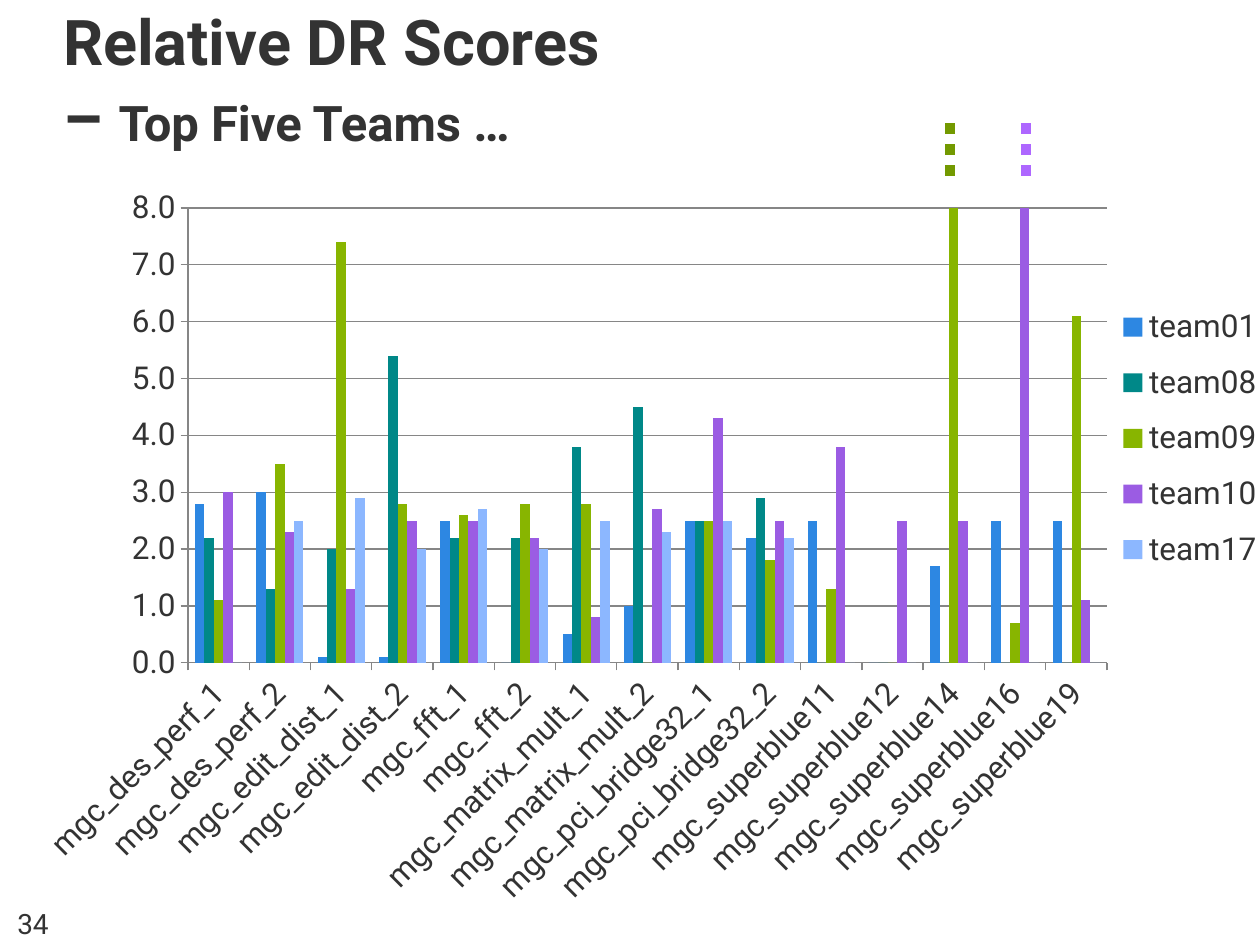
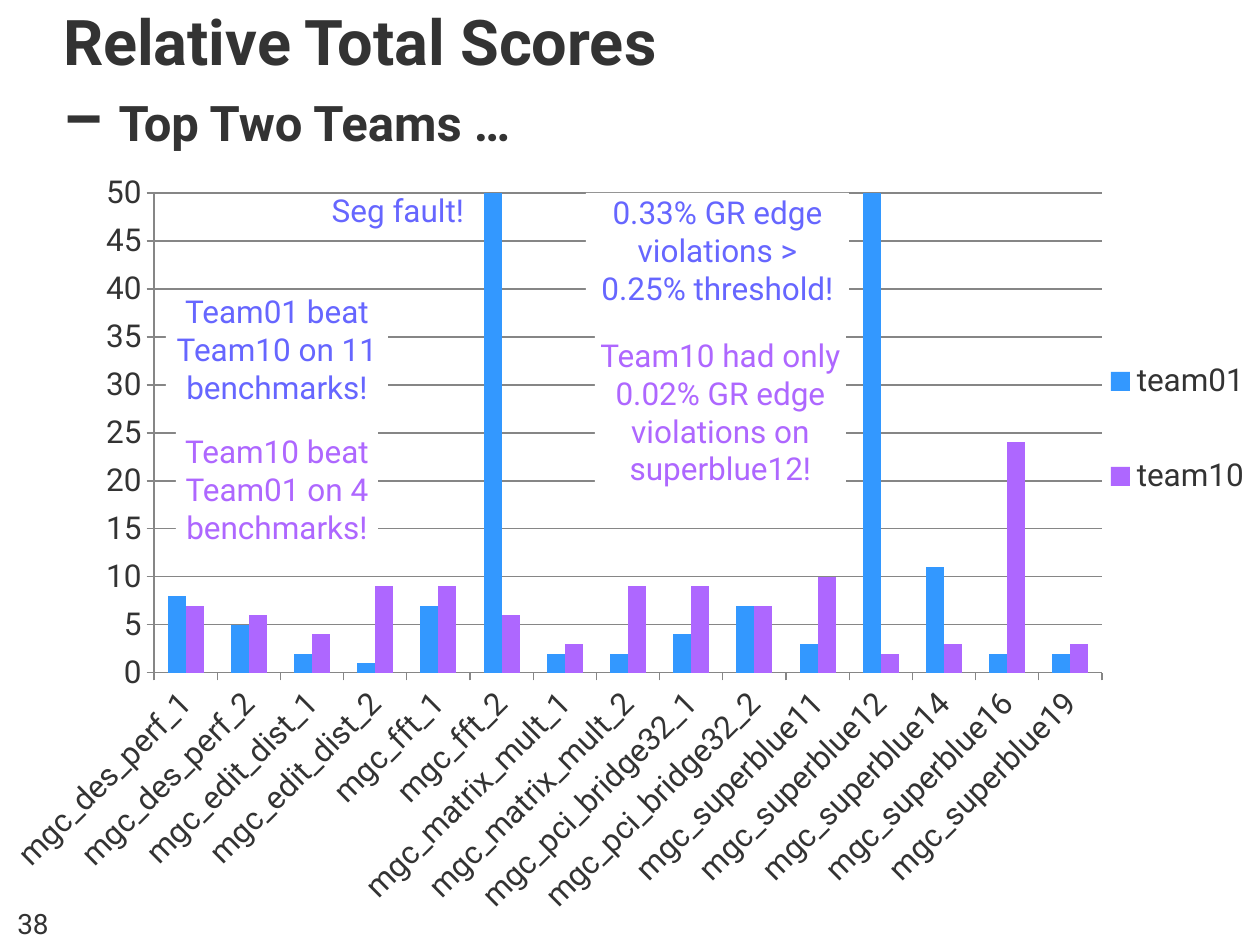
from lxml import etree
from pptx import Presentation
from pptx import util as u
from pptx.chart.data import CategoryChartData
from pptx.dml.color import RGBColor
from pptx.enum import chart as ch, dml, shapes, text
from pptx.oxml.ns import qn

PX = u.Inches(1) / 126
FONT = "Roboto"
COLORS = {
    "ink": "333333", "paper": "FFFFFF", "grid": "868686",
    "blue": "3398FF", "purple": "AE67FF", "violet": "6666FF",
    "dark blue": "2D87E2", "teal": "008888", "green": "88B500",
    "dark purple": "9B5CE3", "pale blue": "8CB7FF", "olive": "739900",
}
BENCHMARKS = [
    "mgc_des_perf_1", "mgc_des_perf_2", "mgc_edit_dist_1", "mgc_edit_dist_2",
    "mgc_fft_1", "mgc_fft_2", "mgc_matrix_mult_1", "mgc_matrix_mult_2",
    "mgc_pci_bridge32_1", "mgc_pci_bridge32_2", "mgc_superblue11",
    "mgc_superblue12", "mgc_superblue14", "mgc_superblue16", "mgc_superblue19",
]

# Boxes are left, top, width, height in px.
DR_CHART = {
    "frame": (19, 175, 1279, 746), "plot": (188, 208, 919, 455),
    "legend": (1118, 290, 144, 297), "max": 8, "step": 1, "format": "0.0",
    "series": [
        ("team01", "dark blue", [2.8, 3, 0.1, 0.1, 2.5, 0, 0.5, 1, 2.5, 2.2, 2.5, 0, 1.7, 2.5, 2.5]),
        ("team08", "teal", [2.2, 1.3, 2, 5.4, 2.2, 2.2, 3.8, 4.5, 2.5, 2.9, 0, 0, 0, 0, 0]),
        ("team09", "green", [1.1, 3.5, 7.4, 2.8, 2.6, 2.8, 2.8, 0, 2.5, 1.8, 1.3, 0, 15.9, 0.7, 6.1]),
        ("team10", "dark purple", [3, 2.3, 1.3, 2.5, 2.5, 2.2, 0.8, 2.7, 4.3, 2.5, 3.8, 2.5, 2.5, 16.7, 1.1]),
        ("team17", "pale blue", [0, 2.5, 2.9, 2, 2.7, 2, 2.5, 2.3, 2.5, 2.2, 0, 0, 0, 0, 0]),
    ],
}
TOTAL_CHART = {
    "frame": (-15, 160, 1308, 771), "plot": (154, 193, 948, 480),
    "legend": (1105, 305, 145, 248), "max": 50, "step": 5, "format": "0",
    "series": [
        ("team01", "blue", [8, 5, 2, 1, 7, 50, 2, 2, 4, 7, 3, 50, 11, 2, 2]),
        ("team10", "purple", [7, 6, 4, 9, 9, 6, 3, 9, 9, 7, 10, 2, 3, 24, 3]),
    ],
}
OFF_SCALE_MARKS = [(950, "olive"), (1026, "purple")]
SEG_FAULT = ("Seg fault!", "violet", (292, 185, 212, 50))
CALLOUTS = [
    ("0.33% GR edge violations >\n0.25% threshold!", "violet", (586, 193, 263, 115)),
    ("Team01 beat Team10 on 11 benchmarks!", "violet", (166, 292, 222, 115)),
    ("Team10 beat Team01 on 4 benchmarks!", "purple", (176, 432, 202, 115)),
    ("Team10 had only 0.02% GR edge violations on superblue12!", "purple", (595, 336, 251, 152)),
]


def px(*lengths):
    return [round(length * PX) for length in lengths]


def color(name):
    return RGBColor.from_string(COLORS[name])


def style(font, size, name="ink", bold=False):
    font.name, font.size, font.bold = FONT, u.Pt(size), bold
    font.color.rgb = color(name)


def add_text(para, words, size, name="ink", bold=False):
    """Add one run per line, with line breaks between them."""
    for index, line in enumerate(words.split("\n")):
        if index:
            para.add_line_break()
        span = para.add_run()
        span.text = line
        style(span.font, size, name, bold)


def start_page(deck, heading, subheading, number):
    page = deck.slides.add_slide(deck.slide_layouts[5])
    title = page.shapes.title
    title.left, title.top, title.width, title.height = px(0, 13, 1260, 147)
    frame = title.text_frame
    frame.word_wrap, frame.auto_size = True, text.MSO_AUTO_SIZE.NONE
    frame.vertical_anchor = text.MSO_ANCHOR.BOTTOM
    frame.margin_left = frame.margin_right = u.Inches(0.5)
    para = frame.paragraphs[0]
    para.alignment = text.PP_ALIGN.LEFT
    add_text(para, heading + "\n– ", 36, bold=True)
    add_text(para, subheading, 28, bold=True)

    box = page.shapes.add_textbox(*px(0, 914, 66, 32))
    box.text_frame.vertical_anchor = text.MSO_ANCHOR.BOTTOM
    write_centered(box, number, 16, "ink")
    return page


def write_centered(box, words, size, name):
    box.text_frame.word_wrap = True
    para = box.text_frame.paragraphs[0]
    para.alignment = text.PP_ALIGN.CENTER
    add_text(para, words, size, name)


def pin(part, index, box, frame, inner=False):
    """Give a chart part a fixed place, as fractions of the chart frame."""
    for old in part.findall(qn("c:layout")):
        part.remove(old)
    layout = etree.Element(qn("c:layout"))
    manual = etree.SubElement(layout, qn("c:manualLayout"))
    left, top, width, height = frame
    settings = [("layoutTarget", "inner")] if inner else []
    settings += [("xMode", "edge"), ("yMode", "edge"),
                 ("x", (box[0] - left) / width), ("y", (box[1] - top) / height),
                 ("w", box[2] / width), ("h", box[3] / height)]
    for tag, value in settings:
        etree.SubElement(manual, qn("c:" + tag)).set("val", str(value))
    part.insert(index, layout)


def add_score_chart(page, scores):
    data = CategoryChartData(number_format=scores["format"])
    data.categories = BENCHMARKS
    for team, _, values in scores["series"]:
        data.add_series(team, values)
    chart = page.shapes.add_chart(
        ch.XL_CHART_TYPE.COLUMN_CLUSTERED, *px(*scores["frame"]), data).chart
    style(chart.font, 18)
    chart.has_title = False
    plot = chart.plots[0]
    plot.gap_width, plot.overlap, plot.vary_by_categories = 150, 0, False
    for series, (_, name, _) in zip(plot.series, scores["series"]):
        series.format.fill.solid()
        series.format.fill.fore_color.rgb = color(name)
        series.invert_if_negative = False

    value_axis, category_axis = chart.value_axis, chart.category_axis
    value_axis.minimum_scale, value_axis.maximum_scale = 0, scores["max"]
    value_axis.major_unit = scores["step"]
    value_axis.has_major_gridlines = True
    value_axis.tick_labels.number_format = scores["format"]
    value_axis.tick_labels.number_format_is_linked = False
    for axis in (value_axis, category_axis):
        axis.major_tick_mark = ch.XL_TICK_MARK.OUTSIDE
        style(axis.tick_labels.font, 18)
    for line in (value_axis.format.line, category_axis.format.line,
                 value_axis.major_gridlines.format.line):
        line.color.rgb, line.width = color("grid"), u.Pt(0.75)
    labels = category_axis._element.find(qn("c:txPr")).find(qn("a:bodyPr"))
    labels.set("rot", "-2700000")
    labels.set("vert", "horz")

    chart.has_legend = True
    legend = chart.legend
    legend.position, legend.include_in_layout = ch.XL_LEGEND_POSITION.RIGHT, False
    style(legend.font, 18)
    pin(legend._element, 1, scores["legend"], scores["frame"])
    plot_area = chart._chartSpace.find(".//" + qn("c:plotArea"))
    pin(plot_area, 0, scores["plot"], scores["frame"], inner=True)


def add_off_scale_mark(page, x, name):
    """Draw the dots above a bar that runs past the top of the scale."""
    mark = page.shapes.add_connector(
        shapes.MSO_CONNECTOR.STRAIGHT, *px(x, 176, x, 115))
    mark.line.color.rgb, mark.line.width = color(name), u.Pt(6)
    mark.line.dash_style = dml.MSO_LINE.ROUND_DOT
    etree.SubElement(mark._element.spPr, qn("a:effectLst"))


def add_callout(page, words, name, place):
    box = page.shapes.add_shape(shapes.MSO_SHAPE.RECTANGLE, *px(*place))
    box.shadow.inherit = False
    box.fill.solid()
    box.fill.fore_color.rgb = color("paper")
    box.line.fill.background()
    frame = box.text_frame
    frame.margin_left = frame.margin_right = frame.margin_top = frame.margin_bottom = 0
    frame.vertical_anchor = text.MSO_ANCHOR.TOP
    write_centered(box, words, 18, name)


def main():
    deck = Presentation()
    deck.slide_width, deck.slide_height = u.Inches(10), u.Inches(7.5)

    page = start_page(deck, "Relative DR Scores", "Top Five Teams …", "34")
    for x, name in OFF_SCALE_MARKS:
        add_off_scale_mark(page, x, name)
    add_score_chart(page, DR_CHART)

    page = start_page(deck, "Relative Total Scores", "Top Two Teams …", "38")
    add_score_chart(page, TOTAL_CHART)
    words, name, place = SEG_FAULT
    write_centered(page.shapes.add_textbox(*px(*place)), words, 18, name)
    for callout in CALLOUTS:
        add_callout(page, *callout)

    deck.save("out.pptx")


if __name__ == "__main__":
    main()
